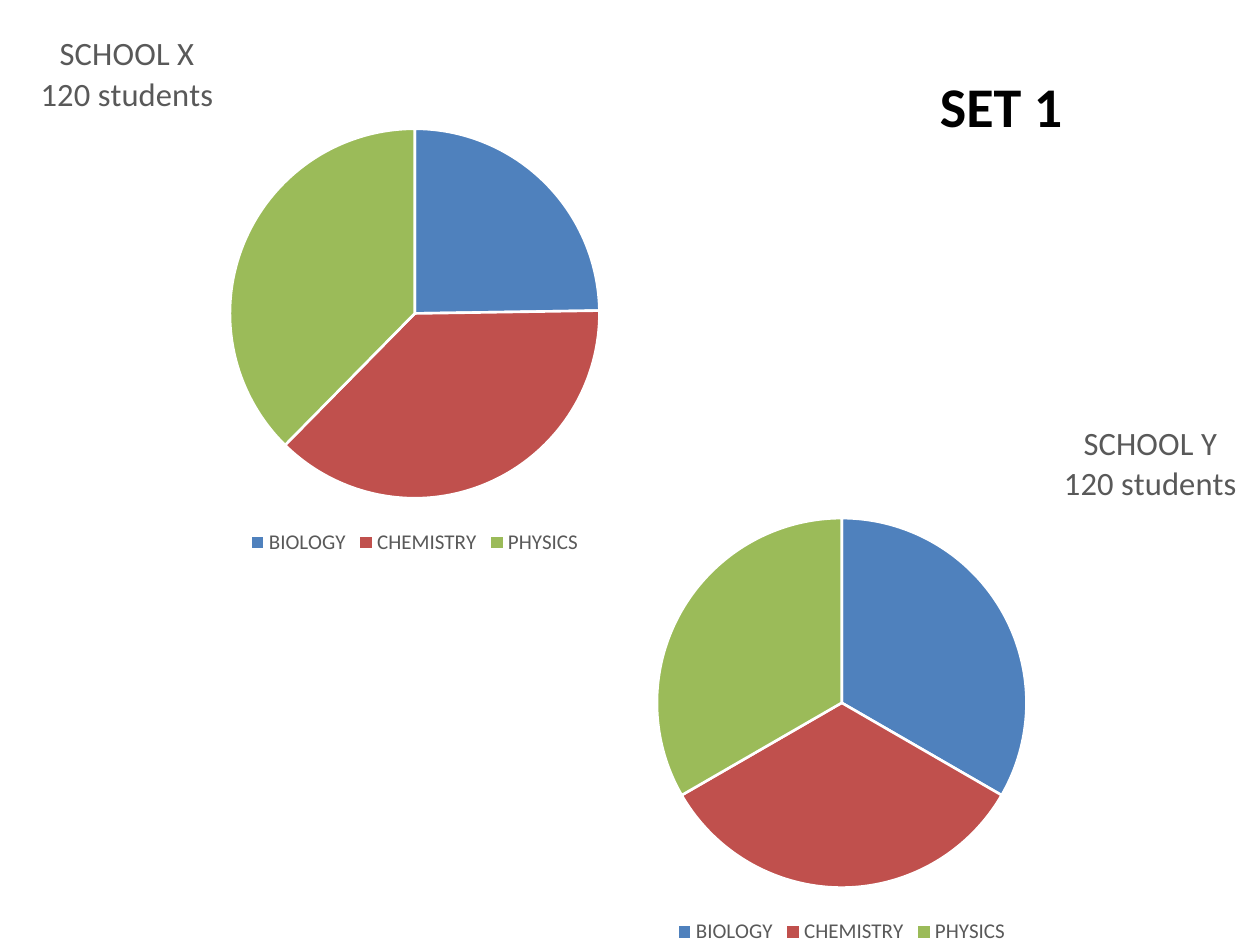
from lxml.etree import SubElement
from pptx import Presentation
from pptx.chart.data import CategoryChartData
from pptx.dml.color import RGBColor
from pptx.enum.chart import XL_CHART_TYPE as ChartType, XL_LEGEND_POSITION as LegendPosition
from pptx.enum.text import MSO_AUTO_SIZE as AutoSize, PP_ALIGN as Align
from pptx.oxml.ns import qn
from pptx.oxml.xmlchemy import OxmlElement
from pptx.util import Pt

COLORS = {
    "biology": "4F81BD",
    "chemistry": "C0504D",
    "physics": "9BBB59",
    "label": "595959",
    "heading": "000000",
    "border": "FFFFFF",
}
SUBJECTS = ("biology", "chemistry", "physics")
FONT = "Calibri"
CHART_WIDTH, CHART_HEIGHT = 480, 320


def color(name):
    return RGBColor.from_string(COLORS[name])


def format_font(font, size, color_name, bold=False):
    font.name = FONT
    font.size = Pt(size)
    font.bold = bold
    font.color.rgb = color(color_name)


def write_text(frame, text, size, color_name, bold=False, align=Align.LEFT):
    for index, line in enumerate(text.split("\n")):
        paragraph = frame.add_paragraph() if index else frame.paragraphs[0]
        paragraph.alignment = align
        run = paragraph.add_run()
        run.text = line
        format_font(run.font, size, color_name, bold)


def set_layout(element, index, **values):
    for old_layout in element.findall(qn("c:layout")):
        element.remove(old_layout)
    layout = OxmlElement("c:layout")
    element.insert(index, layout)
    manual = SubElement(layout, qn("c:manualLayout"))
    if "w" in values:
        SubElement(manual, qn("c:layoutTarget")).set("val", "inner")
    for axis in ("x", "y"):
        SubElement(manual, qn(f"c:{axis}Mode")).set("val", "edge")
    for name, value in values.items():
        SubElement(manual, qn(f"c:{name}")).set("val", str(value))


def add_school_pie(slide, left, top, width, height, title, title_x, values):
    data = CategoryChartData()
    data.categories = [subject.upper() for subject in SUBJECTS]
    data.add_series("Series 1", values)
    chart = slide.shapes.add_chart(
        ChartType.PIE, Pt(left), Pt(top), Pt(width), Pt(height), data
    ).chart
    format_font(chart.font, 10, "heading")

    chart.has_title = True
    chart_title = chart.chart_title
    write_text(chart_title.text_frame, title, size=18.6, color_name="label", align=Align.CENTER)
    chart_title.include_in_layout = False
    set_layout(chart_title._element, 1, x=title_x, y=0.05)

    chart.has_legend = True
    chart.legend.position = LegendPosition.BOTTOM
    chart.legend.include_in_layout = False
    format_font(chart.legend.font, 12, "label")

    plot = chart.plots[0]
    plot.vary_by_categories = True
    diameter = 210
    set_layout(
        chart._chartSpace.chart.plotArea, 0,
        x=round((1 - diameter / width) / 2, 2), y=0.23,
        w=round(diameter / width, 2), h=round(diameter / height, 2),
    )
    for index, subject in enumerate(SUBJECTS):
        slice_format = plot.series[0].points[index].format
        slice_format.fill.solid()
        slice_format.fill.fore_color.rgb = color(subject)
        slice_format.line.color.rgb = color("border")
        slice_format.line.width = Pt(1.5)


def add_heading(slide, left, top, width, height, text):
    frame = slide.shapes.add_textbox(Pt(left), Pt(top), Pt(width), Pt(height)).text_frame
    frame.word_wrap = False
    frame.auto_size = AutoSize.SHAPE_TO_FIT_TEXT
    write_text(frame, text, size=32, color_name="heading", bold=True)


def main():
    presentation = Presentation()
    presentation.slide_width, presentation.slide_height = Pt(720), Pt(540)
    slide = presentation.slides.add_slide(presentation.slide_layouts[6])
    schools = (
        (-3, 0, "SCHOOL X\n120 students", 0.05, (25, 38, 38)),
        (241, 222.5, "SCHOOL Y\n120 students", 0.76, (33, 33, 33)),
    )
    for left, top, title, title_x, values in schools:
        add_school_pie(slide, left, top, CHART_WIDTH, CHART_HEIGHT, title, title_x, values)
    add_heading(slide, 530, 37.5, 91, 46, "SET 1")
    presentation.save("out.pptx")


if __name__ == "__main__":
    main()
